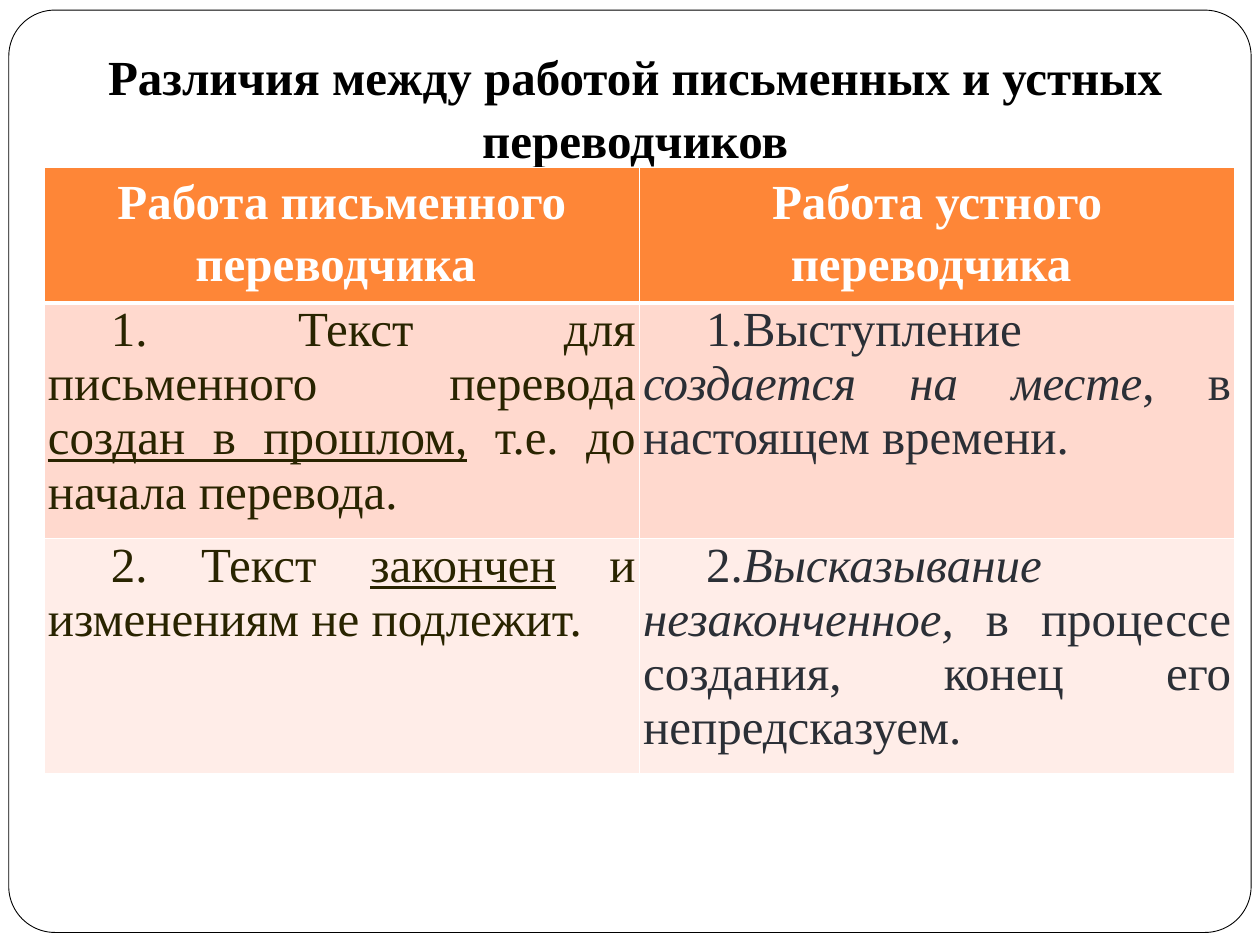
"""Build the slide comparing the work of translators and interpreters."""
from dataclasses import dataclass

from lxml.etree import SubElement
from pptx import Presentation
from pptx.dml.color import RGBColor
from pptx.enum.shapes import MSO_SHAPE
from pptx.enum.text import PP_ALIGN
from pptx.oxml.ns import qn
from pptx.slide import Slide
from pptx.table import _Cell
from pptx.util import Inches, Pt

WHITE = RGBColor(0xFF, 0xFF, 0xFF)
BLACK = RGBColor(0x00, 0x00, 0x00)
ORANGE = RGBColor(0xFE, 0x86, 0x37)
PEACH = RGBColor(0xFF, 0xD9, 0xCE)
PALE_PEACH = RGBColor(0xFF, 0xED, 0xE8)
OLIVE = RGBColor(0x29, 0x24, 0x00)
SLATE = RGBColor(0x2B, 0x2F, 0x36)

WIDTH, HEIGHT = Inches(10), Inches(7.5)
FONT_NAME, FONT_SIZE = "Times New Roman", Pt(28)
THIN, THICK = Pt(1), Pt(3)


@dataclass(frozen=True)
class Area:
    """Place on the slide in percent of its width and height."""

    left: float
    top: float
    width: float
    height: float

    def box(self) -> tuple[int, int, int, int]:
        """Return left, top, width and height as slide lengths."""
        return (across(self.left), down(self.top),
                across(self.width), down(self.height))


@dataclass(frozen=True)
class Phrase:
    """Piece of text with its emphasis."""

    text: str
    italic: bool = False
    underline: bool = False


@dataclass(frozen=True)
class Row:
    """Table row with one tuple of phrases per column."""

    height: float
    fill: RGBColor
    inks: tuple[RGBColor, RGBColor]
    entries: tuple[tuple[Phrase, ...], ...]
    header: bool = False
    top_border: int = THIN
    bottom_border: int = THIN


FRAME = Area(0.7, 1.07, 98.6, 97.6)
TITLE = Area(7.5, 3.87, 85.8, 13.87)
TABLE = Area(3.5, 17.73, 94.5, 64)

ROWS = (
    Row(14.13, ORANGE, (WHITE, WHITE), (
        (Phrase("Работа письменного переводчика "),),
        (Phrase("Работа устного переводчика "),),
    ), header=True, bottom_border=THICK),
    Row(24.93, PEACH, (OLIVE, SLATE), (
        (Phrase("1. Текст для письменного перевода "),
         Phrase("создан в прошлом,", underline=True),
         Phrase(" т.е. до начала перевода. ")),
        (Phrase("1.Выступление "),
         Phrase("создается на месте", italic=True),
         Phrase(", в настоящем времени. ")),
    ), top_border=THICK),
    Row(24.93, PALE_PEACH, (OLIVE, SLATE), (
        (Phrase("2. Текст "),
         Phrase("закончен", underline=True),
         Phrase(" и изменениям не подлежит. ")),
        (Phrase("2."),
         Phrase("Высказывание незаконченное, ", italic=True),
         Phrase("в процессе создания, конец его непредсказуем. ")),
    )),
)


def across(percent: float) -> int:
    """Convert a percentage of the slide width to a length."""
    return round(WIDTH * percent / 100)


def down(percent: float) -> int:
    """Convert a percentage of the slide height to a length."""
    return round(HEIGHT * percent / 100)


def set_font(paragraph, color: RGBColor, bold: bool) -> None:
    """Apply the common typeface to a paragraph."""
    font = paragraph.font
    font.name, font.size, font.bold = FONT_NAME, FONT_SIZE, bold
    font.color.rgb = color


def draw_frame(slide: Slide) -> None:
    """Draw the rounded frame around the slide."""
    frame = slide.shapes.add_shape(MSO_SHAPE.ROUNDED_RECTANGLE, *FRAME.box())
    frame.adjustments[0] = 0.05
    frame.shadow.inherit = False
    frame.fill.solid()
    frame.fill.fore_color.rgb = WHITE
    frame.line.color.rgb = BLACK
    frame.line.width = Pt(0.5)


def draw_title(slide: Slide) -> None:
    """Write the heading above the table."""
    text_frame = slide.shapes.add_textbox(*TITLE.box()).text_frame
    text_frame.word_wrap = True
    heading = text_frame.paragraphs[0]
    heading.text = "Различия между работой письменных и устных переводчиков"
    heading.alignment = PP_ALIGN.CENTER
    heading.line_spacing = 1.07
    set_font(heading, BLACK, True)


def set_borders(cell: _Cell, top: int, bottom: int) -> None:
    """Give a cell white borders ahead of its fill."""
    properties = cell._tc.get_or_add_tcPr()
    sides = {"a:lnL": THIN, "a:lnR": THIN, "a:lnT": top, "a:lnB": bottom}
    for side, width in sides.items():
        border = SubElement(properties, qn(side), w=str(int(width)))
        solid = SubElement(border, qn("a:solidFill"))
        SubElement(solid, qn("a:srgbClr"), val=str(WHITE))


def fill_cell(cell: _Cell, row: Row, column: int) -> None:
    """Write and format one table cell."""
    cell.margin_left = cell.margin_right = Inches(0.03)
    cell.margin_top = cell.margin_bottom = 0
    set_borders(cell, row.top_border, row.bottom_border)
    cell.fill.solid()
    cell.fill.fore_color.rgb = row.fill
    paragraph = cell.text_frame.paragraphs[0]
    if row.header:
        paragraph.alignment = PP_ALIGN.CENTER
        paragraph.line_spacing = 1.15
    else:
        paragraph.alignment = PP_ALIGN.JUSTIFY
        layout = paragraph._p.get_or_add_pPr()
        layout.set("marL", "0")
        layout.set("indent", str(int(Inches(0.5))))
    set_font(paragraph, row.inks[column], row.header)
    for phrase in row.entries[column]:
        run = paragraph.add_run()
        run.text = phrase.text
        if phrase.italic:
            run.font.italic = True
        if phrase.underline:
            run.font.underline = True


def draw_table(slide: Slide) -> None:
    """Draw the two-column comparison."""
    comparison = slide.shapes.add_table(len(ROWS), 2, *TABLE.box()).table
    comparison.horz_banding = False
    for column in comparison.columns:
        column.width = across(TABLE.width / 2)
    for index, row in enumerate(ROWS):
        comparison.rows[index].height = down(row.height)
        for column in range(len(row.entries)):
            fill_cell(comparison.cell(index, column), row, column)


def main() -> None:
    """Assemble and save the slide."""
    presentation = Presentation()
    presentation.slide_width, presentation.slide_height = WIDTH, HEIGHT
    slide = presentation.slides.add_slide(presentation.slide_layouts[6])
    draw_frame(slide)
    draw_title(slide)
    draw_table(slide)
    presentation.save("out.pptx")


if __name__ == "__main__":
    main()
